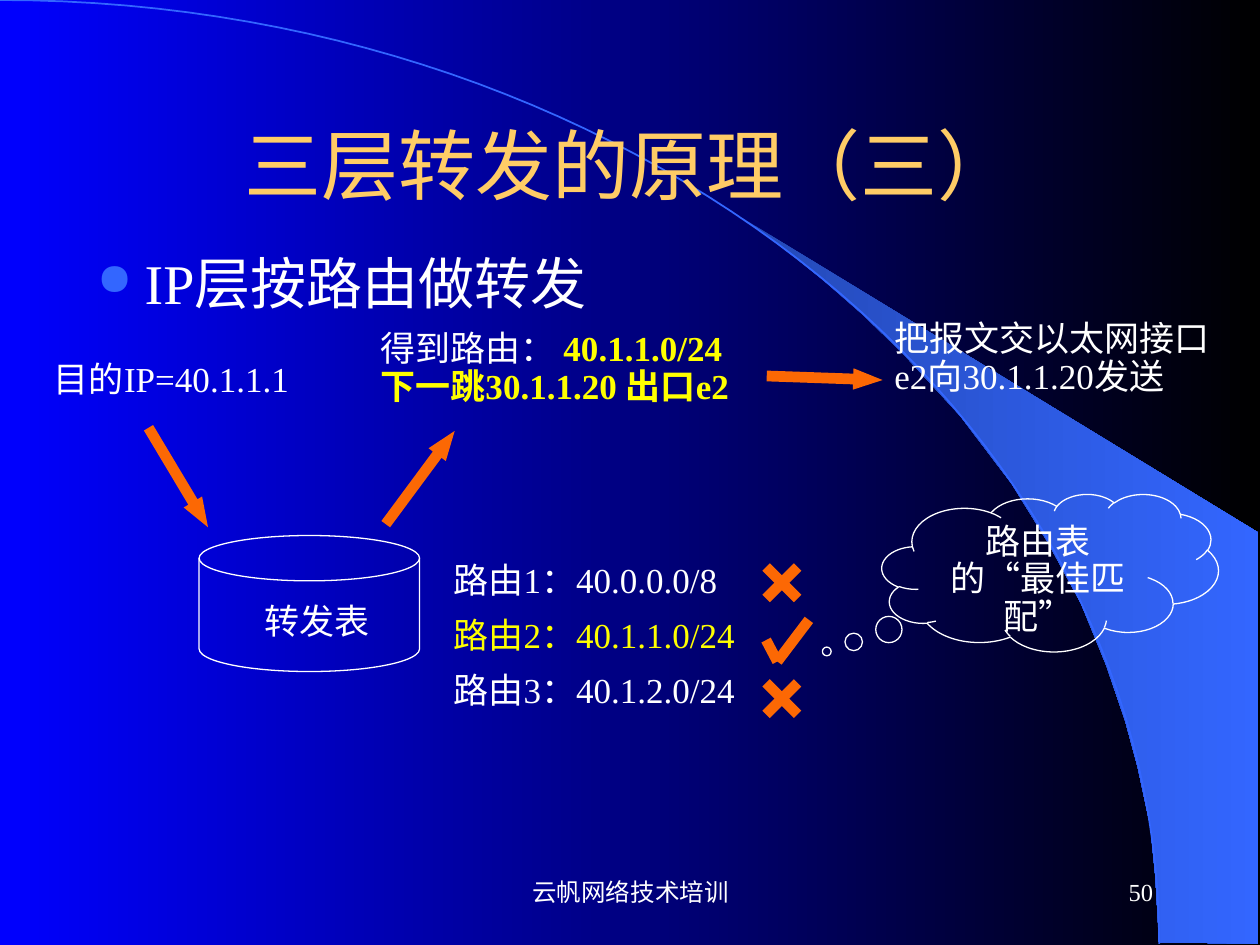
import pptx
import pptx.util
import pptx.dml.color
import pptx.enum.shapes
import pptx.enum.text
import pptx.oxml.ns
from lxml import etree

Inches = pptx.util.Inches
Pt = pptx.util.Pt
SHAPE = pptx.enum.shapes.MSO_SHAPE
ALIGN = pptx.enum.text.PP_ALIGN
ANCHOR = pptx.enum.text.MSO_ANCHOR
COLORS = {
    "blue": "0000FF", "black": "000000", "deep": "2449B6", "accent": "3366FF",
    "white": "FFFFFF", "gold": "FFCC66", "yellow": "FFFF00", "orange": "FC6804",
}
SERIF = "Times New Roman"
BEAM_POINTS = [
    (9.2, 7.48), (9.99, 7.49), (9.99, 4.23), (5.89, 1.73), (6.24, 1.99), (6.53, 2.22),
    (6.85, 2.5), (7.16, 2.8), (7.62, 3.3), (8.03, 3.84), (8.32, 4.31), (8.58, 4.79),
    (8.78, 5.28), (8.93, 5.72), (9.03, 6.09), (9.13, 6.56), (9.17, 6.96),
]


def color(name):
    """Return the named colour."""
    return pptx.dml.color.RGBColor.from_string(COLORS[name])


def set_gradient(fill, start, end):
    """Fill from left to right between two named colours."""
    fill.gradient()
    fill.gradient_angle = 0
    for stop, name in zip(fill.gradient_stops, (start, end)):
        stop.color.rgb = color(name)


def set_outline(shape, name, width):
    """Leave a shape hollow with a coloured outline."""
    shape.shadow.inherit = False
    shape.fill.background()
    shape.line.color.rgb = color(name)
    shape.line.width = Pt(width)


def add_run(paragraph, text, size=20, font=SERIF, ink="white", bold=False):
    """Append one formatted run."""
    run = paragraph.add_run()
    run.text = text
    run.font.size = Pt(size)
    run.font.name = font
    run.font.bold = bold
    run.font.color.rgb = color(ink)


def add_box(slide, box, anchor=ANCHOR.TOP, align=ALIGN.LEFT, spacing=None):
    """Add a wrapping text box and return its first paragraph and frame."""
    frame = slide.shapes.add_textbox(*map(Inches, box)).text_frame
    frame.word_wrap = True
    frame.vertical_anchor = anchor
    paragraph = frame.paragraphs[0]
    paragraph.alignment = align
    paragraph.line_spacing = spacing
    return paragraph, frame


def add_label(slide, box, text):
    """Add a tight white label."""
    paragraph, _ = add_box(slide, box, spacing=0.9)
    add_run(paragraph, text)


def add_arrow(slide, left, top, rotation):
    """Add a rotated orange block arrow."""
    arrow = slide.shapes.add_shape(
        SHAPE.DOWN_ARROW, Inches(left), Inches(top), Inches(0.17), Inches(0.92))
    arrow.adjustments[0] = 0.5
    arrow.adjustments[1] = 1.375
    arrow.rotation = rotation
    arrow.shadow.inherit = False
    arrow.fill.solid()
    arrow.fill.fore_color.rgb = color("orange")
    arrow.line.fill.background()


def add_strokes(slide, left, top, strokes):
    """Draw thick orange strokes relative to a corner."""
    for x1, y1, x2, y2 in strokes:
        line = slide.shapes.add_connector(
            pptx.enum.shapes.MSO_CONNECTOR.STRAIGHT,
            Inches(left + x1), Inches(top + y1), Inches(left + x2), Inches(top + y2))
        line.line.color.rgb = color("orange")
        line.line.width = Pt(6)
        etree.SubElement(line._element.spPr, pptx.oxml.ns.qn("a:effectLst"))


def add_backdrop(slide, width, height):
    """Draw the background gradient, the beam and the arc."""
    set_gradient(slide.background.fill, "blue", "black")
    points = [(Inches(x), Inches(y)) for x, y in BEAM_POINTS]
    builder = slide.shapes.build_freeform(*points[0])
    builder.add_line_segments(points[1:], close=True)
    beam = builder.convert_to_shape()
    beam.shadow.inherit = False
    set_gradient(beam.fill, "deep", "accent")
    beam.line.fill.background()

    control_x, control_y = 5.08, 3.35
    curve = []
    for step in range(1, 61):
        t = step / 60
        u = 1 - t
        x = 3 * u * u * t * control_x + 3 * u * t * t * width + t ** 3 * width
        y = 3 * u * t * t * control_y + t ** 3 * height
        curve.append((Inches(x), Inches(y)))
    builder = slide.shapes.build_freeform(0, 0)
    builder.add_line_segments(curve, close=False)
    set_outline(builder.convert_to_shape(), "accent", 1)


def add_heading(slide, left, top):
    """Add the title and the bulleted statement."""
    paragraph, _ = add_box(slide, (left, top, 8.5, 1.25), ANCHOR.MIDDLE, ALIGN.CENTER)
    add_run(paragraph, "三层转发的原理（三）", 44, "Arial", "gold")
    paragraph, _ = add_box(slide, (left - 0.08, top + 1.25, 8.75, 1.33))
    add_run(paragraph, "IP层按路由做转发", 32)
    properties = paragraph._p.get_or_add_pPr()
    properties.set("marL", str(Inches(0.38)))
    properties.set("indent", str(-Inches(0.38)))
    qn = pptx.oxml.ns.qn
    bullet_color = etree.SubElement(properties, qn("a:buClr"))
    etree.SubElement(bullet_color, qn("a:srgbClr"), val=COLORS["accent"])
    etree.SubElement(properties, qn("a:buSzPct"), val="80000")
    etree.SubElement(properties, qn("a:buChar"), char="●")


def add_flow(slide, left, top):
    """Add the lookup flow from destination to forwarding."""
    add_label(slide, (left, top + 0.33, 2.33, 0.4), "目的IP=40.1.1.1")
    add_arrow(slide, left + 1, top + 0.83, 329.1)
    disk = slide.shapes.add_shape(
        SHAPE.FLOWCHART_MAGNETIC_DISK,
        Inches(left + 1.25), Inches(top + 1.75), Inches(1.75), Inches(1.08))
    set_outline(disk, "white", 0.75)
    add_label(slide, (left + 1.67, top + 2.25, 1.42, 0.4), "转发表")
    add_arrow(slide, left + 2.92, top + 0.83, 216.5)
    paragraph, _ = add_box(slide, (left + 2.59, top + 0.08, 3.33, 1.17), spacing=0.9)
    add_run(paragraph, "得到路由： ")
    add_run(paragraph, "40.1.1.0/24", ink="yellow", bold=True)
    paragraph.add_line_break()
    add_run(paragraph, "下一跳30.1.1.20 出口e2", ink="yellow", bold=True)
    add_arrow(slide, left + 6.13, top + 0.04, 272)
    add_label(slide, (left + 6.67, top, 2.83, 1.17), "把报文交以太网接口e2向30.1.1.20发送")


def add_routes(slide, left, top):
    """Add the candidate routes, their marks and the thought cloud."""
    routes = [("路由1：40.0.0.0/8", "white"), ("路由2：40.1.1.0/24", "yellow"),
              ("路由3：40.1.2.0/24", "white")]
    paragraph, frame = add_box(slide, (left, top, 3.75, 1.34), spacing=0.9)
    for index, (text, ink) in enumerate(routes):
        if index:
            paragraph = frame.add_paragraph()
            paragraph.line_spacing = 0.9
            paragraph.space_before = Pt(10)
        add_run(paragraph, text, ink=ink)
    cross = [(0, 0, 0.25, 0.25), (0.25, 0, 0, 0.25)]
    check = [(0, 0.16, 0.09, 0.33), (0.09, 0.33, 0.34, 0)]
    for offset, strokes in ((0.08, cross), (0.5, check), (1, cross)):
        add_strokes(slide, left + 2.58, top + offset, strokes)

    cloud = slide.shapes.add_shape(
        SHAPE.CLOUD_CALLOUT, Inches(left + 3.5), Inches(top - 0.5), Inches(2.67), Inches(1.25))
    cloud.adjustments[0] = -0.664
    cloud.adjustments[1] = 0.5
    set_outline(cloud, "white", 0.75)
    cloud.text_frame.word_wrap = True
    cloud.text_frame.vertical_anchor = ANCHOR.TOP
    paragraph = cloud.text_frame.paragraphs[0]
    paragraph.alignment = ALIGN.CENTER
    paragraph.line_spacing = 0.9
    add_run(paragraph, "路由表的“最佳匹配”")


def add_footer(slide, left, top):
    """Add the course name and the page number."""
    paragraph, _ = add_box(slide, (left, top, 3.17, 0.5), ANCHOR.MIDDLE, ALIGN.CENTER)
    add_run(paragraph, "云帆网络技术培训", 14)
    paragraph, _ = add_box(slide, (left + 3.75, top, 2.08, 0.5), ANCHOR.MIDDLE, ALIGN.RIGHT)
    add_run(paragraph, "50", 14)


def main():
    """Build and save the slide."""
    presentation = pptx.Presentation()
    presentation.slide_width = Inches(10)
    presentation.slide_height = Inches(7.5)
    slide = presentation.slides.add_slide(presentation.slide_layouts[6])
    add_backdrop(slide, 9.2, 7.49)
    add_footer(slide, 3.42, 6.83)
    add_heading(slide, 0.75, 0.67)
    add_flow(slide, 0.33, 2.5)
    add_routes(slide, 3.5, 4.42)
    presentation.save("out.pptx")


if __name__ == "__main__":
    main()
